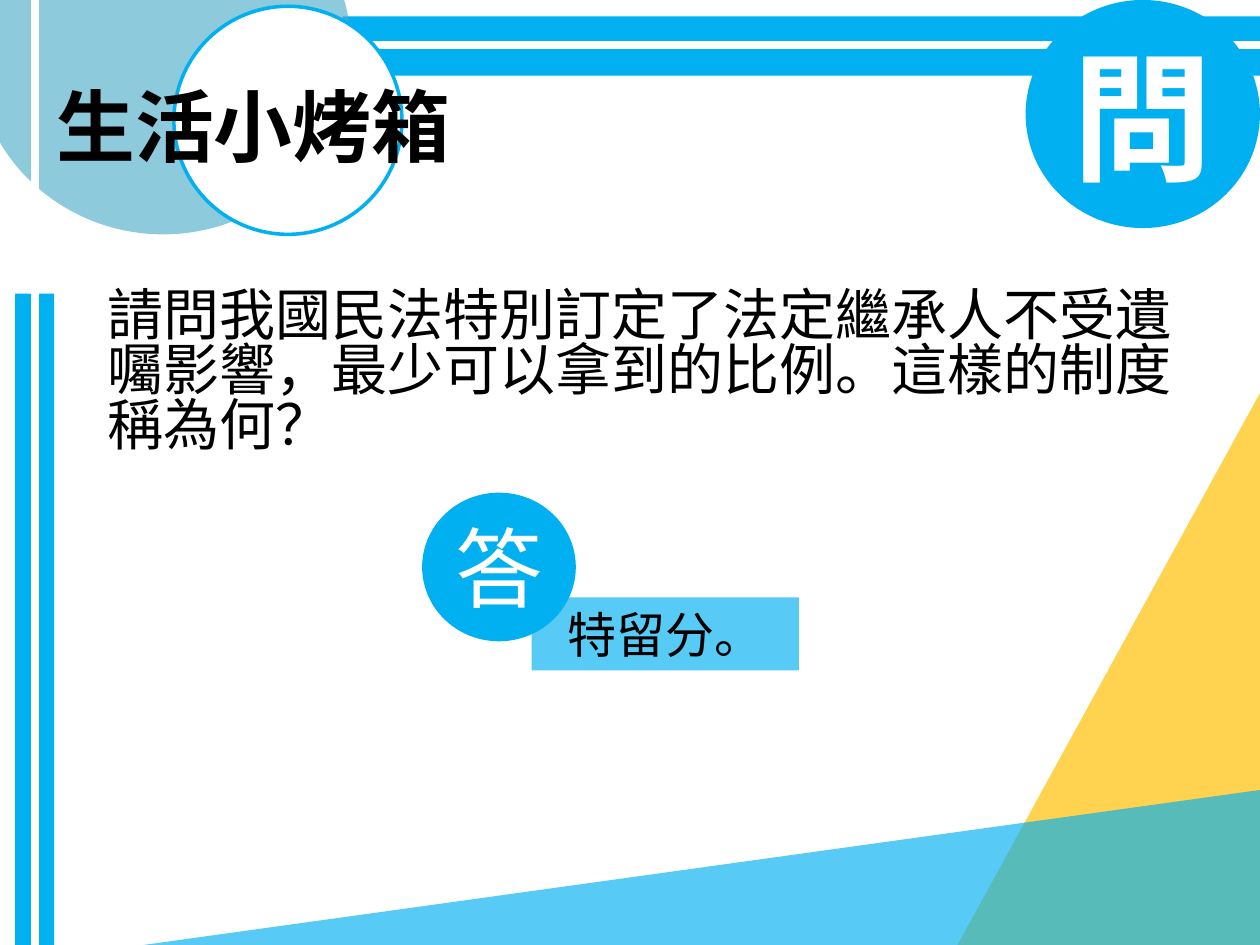
from dataclasses import dataclass

from lxml.etree import SubElement as sub
from pptx import Presentation
from pptx.dml.color import RGBColor as RGB
from pptx.enum.shapes import MSO_CONNECTOR as Conn, MSO_SHAPE as Shape
from pptx.enum.text import MSO_ANCHOR as Anchor, MSO_AUTO_SIZE as Auto, PP_ALIGN as Align
from pptx.oxml.ns import qn
from pptx.util import Inches, Pt


@dataclass(frozen=True)
class Theme:
    font: str = "Noto Sans CJK SC"
    black: str = "000000"
    white: str = "FFFFFF"
    blue: str = "00B0F0"
    pale: str = "57CBF5"
    teal: str = "4BACC6"
    gold: str = "FFC000"
    ask: int = 80
    reply: int = 50
    title: int = 45
    body: int = 32
    note: int = 28


THEME = Theme()


def color(code):
    return RGB.from_string(code)


def put(item, box):
    item.left, item.top, item.width, item.height = map(Inches, box)


def shape(parent, kind, box, fill, alpha=None, edge=None, flip=False):
    """Add a flat preset shape; alpha is its opacity in percent."""
    item = parent.add_shape(kind, *map(Inches, box))
    item.shadow.inherit = False
    item.fill.solid()
    item.fill.fore_color.rgb = color(fill)
    props = item._element.spPr
    if alpha:
        tint = props.find(qn("a:solidFill")).find(qn("a:srgbClr"))
        sub(tint, qn("a:alpha"), val=str(alpha * 1000))
    if edge:
        item.line.color.rgb = color(edge)
        item.line.width = Pt(2)
    else:
        item.line.fill.background()
    if flip:
        props.find(qn("a:xfrm")).set("flipH", "1")
    return item


def stripe(parent, start, end):
    """Add a white line that splits a blue band in two."""
    line = parent.add_connector(Conn.STRAIGHT, *map(Inches, start + end))
    line.line.color.rgb = color(THEME.white)
    line.line.width = Pt(4.5)
    sub(line._element.spPr, qn("a:effectLst"))


def write(item, text, size, ink, bold=False, align=Align.CENTER, anchor=Anchor.MIDDLE):
    frame = item.text_frame
    frame.word_wrap = True
    frame.auto_size = Auto.NONE
    frame.vertical_anchor = anchor
    frame.text = text
    para = frame.paragraphs[0]
    para.alignment = align
    para.space_before = Pt(0)
    props = para._p.get_or_add_pPr()
    props.set("marL", "0")
    props.set("indent", "0")
    sub(props, qn("a:buNone"))
    font = para.font
    font.name, font.size, font.bold = THEME.font, Pt(size), bold
    font.color.rgb = color(ink)
    sub(props.find(qn("a:defRPr")), qn("a:ea"), typeface=THEME.font)
    return frame


def badge(parent, box, text, size, bold=False):
    """Add a blue disc with one white character."""
    disc = shape(parent, Shape.OVAL, box, THEME.blue)
    frame = write(disc, text, size, THEME.white, bold)
    frame.margin_left = frame.margin_right = 0


def decorate(shapes):
    # Top band and question badge
    shape(shapes, Shape.RECTANGLE, (2.72, 0.13, 7.28, 0.47), THEME.blue)
    stripe(shapes, (10, 0.36), (2.64, 0.36))
    badge(shapes, (8.14, 0, 1.86, 1.81), "問", THEME.ask, True)

    # Circles behind the title
    rings = shapes.add_group_shape().shapes
    shape(rings, Shape.OVAL, (-0.2, -1.05, 2.99, 2.91), THEME.teal, alpha=63)
    shape(rings, Shape.OVAL, (1.38, 0.05, 1.81, 1.81), THEME.white, edge=THEME.blue)

    # Left band
    side = shapes.add_group_shape().shapes
    band = shape(side, Shape.RECTANGLE, (-2.31, 4.76, 5.17, 0.31), THEME.blue)
    band.rotation = 90
    stripe(side, (0.28, 7.5), (0.28, 0))

    # Corner wedges
    for box, fill, alpha in (
        ((7.6, 3.12, 2.4, 4.38), THEME.gold, 69),
        ((1.14, 6.27, 8.86, 1.23), THEME.blue, 66),
    ):
        shape(shapes, Shape.RIGHT_TRIANGLE, box, fill, alpha, flip=True)


def ask(slide):
    title, body = slide.placeholders
    put(title, (0.28, 0.37, 3.46, 1.25))
    write(title, "生活小烤箱", THEME.title, THEME.black, True)
    put(body, (0.75, 2.2, 8.91, 1.97))
    text = "請問我國民法特別訂定了法定繼承人不受遺囑影響，最少可以拿到的比例。這樣的制度稱為何？"
    frame = write(body, text, THEME.body, THEME.black, align=Align.LEFT, anchor=Anchor.TOP)
    frame.margin_top = Inches(0.11)
    frame.paragraphs[0].line_spacing = 0.82
    # Bring both above the decoration
    for item in (title, body):
        slide.shapes._spTree.append(item._element)


def answer(shapes):
    group = shapes.add_group_shape().shapes
    bar = shape(group, Shape.RECTANGLE, (4.22, 4.74, 2.12, 0.58), THEME.pale)
    write(bar, "特留分。", THEME.note, THEME.black)
    badge(group, (3.35, 3.91, 1.22, 1.18), "答", THEME.reply)


def main():
    deck = Presentation()
    deck.slide_width, deck.slide_height = Inches(10), Inches(7.5)
    slide = deck.slides.add_slide(deck.slide_layouts[1])
    decorate(slide.shapes)
    ask(slide)
    answer(slide.shapes)
    deck.save("out.pptx")


if __name__ == "__main__":
    main()
